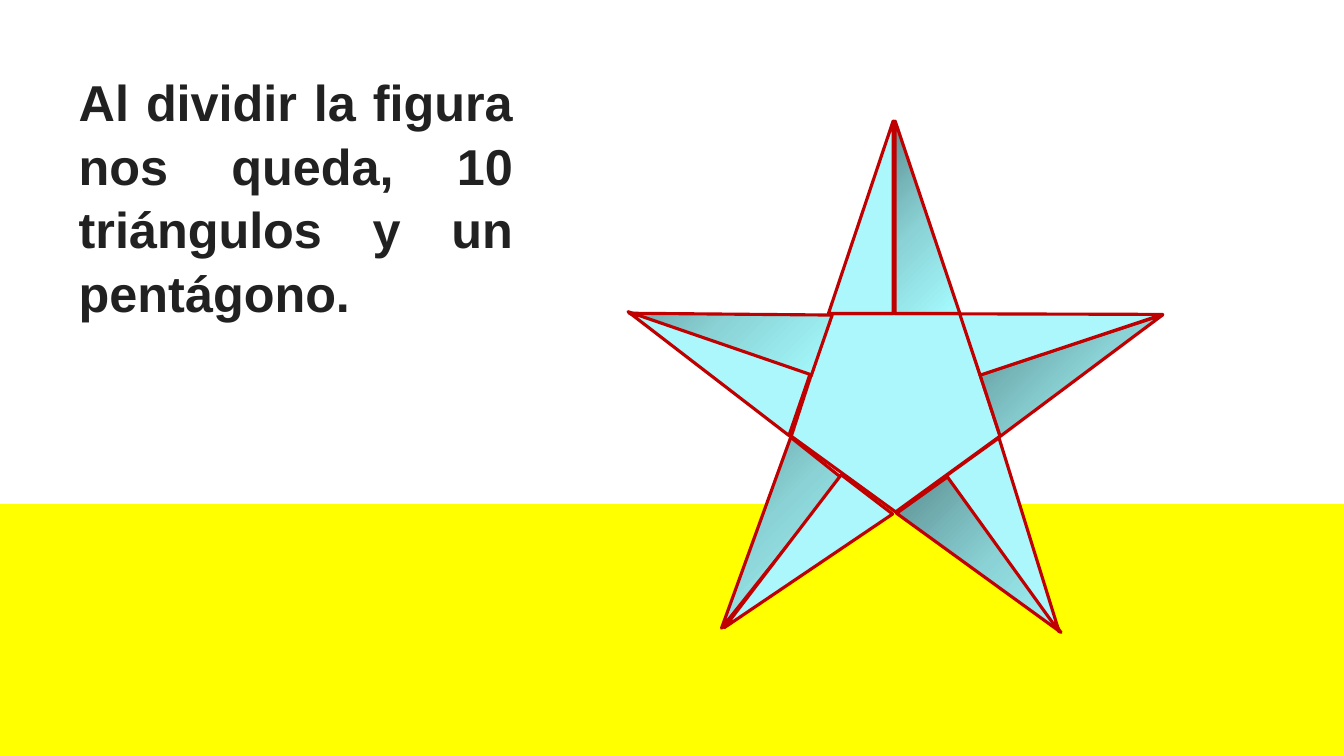
from pptx import Presentation
from pptx.dml.color import RGBColor
from pptx.enum import shapes, text
from pptx.oxml import parse_xml
from pptx.oxml.ns import nsdecls
from pptx.util import Cm, Pt

WHITE = RGBColor(0xFF, 0xFF, 0xFF)
YELLOW = RGBColor(0xFF, 0xFF, 0x00)
AQUA = RGBColor(0xAB, 0xF7, 0xFB)
RED = RGBColor(0xC0, 0x00, 0x00)
INK = RGBColor(0x21, 0x21, 0x21)
SHADE = (
    (0, RGBColor(0x5E, 0x91, 0x94)),
    (50, RGBColor(0x8A, 0xD2, 0xD5)),
    (100, RGBColor(0xA5, 0xFC, 0xFF)),
)
WIDE, TALL = 1.63, 4.85

# Each arm of the star: (left, top, angle) of its shaded half, then of its plain half
ARMS = (
    ((22.56, 3.05, 0), (20.88, 3.05, 0)),
    ((26.44, 7.04, 71.8), (25.93, 5.49, 71.6)),
    ((17.6, 5.49, 289.1), (17.04, 6.99, 289)),
    ((18.24, 11, 218.5), (19.56, 11.96, 217.4)),
    ((23.85, 12.01, 144.5), (25.12, 11.05, 144.2)),
)


def add_form(slide, kind, box, fill, angle=0, edge=RED):
    form = slide.shapes.add_shape(kind, *map(Cm, box))
    form.shadow.inherit = False
    form.rotation = angle
    form.fill.solid()
    form.fill.fore_color.rgb = fill
    if edge is None:
        form.line.fill.background()
    else:
        form.line.color.rgb = edge
        form.line.width = Pt(2.25)
    return form


def add_half(slide, left, top, angle):
    box = (left, top, WIDE, TALL)
    return add_form(slide, shapes.MSO_SHAPE.RIGHT_TRIANGLE, box, AQUA, angle)


def shade(form):
    """Fill with a radial gradient, darkest at the top left of the slide side."""
    stops = "".join(
        f'<a:gs pos="{pos * 1000}"><a:srgbClr val="{tint}"/></a:gs>'
        for pos, tint in SHADE
    )
    grad = parse_xml(
        f'<a:gradFill {nsdecls("a")} rotWithShape="0"><a:gsLst>{stops}</a:gsLst>'
        '<a:path path="circle"><a:fillToRect r="100000" b="100000"/></a:path>'
        "</a:gradFill>"
    )
    props = form._element.spPr
    props.replace(props.solidFill, grad)


def mirror(form):
    form._element.spPr.xfrm.set("flipH", "1")


def set_title(slide, words):
    title = slide.shapes.title
    title.left, title.top, title.width, title.height = map(
        Cm, (1.73, 1.6, 11.46, 7.75)
    )
    frame = title.text_frame
    frame.text = words
    frame.word_wrap = True
    frame.auto_size = text.MSO_AUTO_SIZE.NONE
    frame.vertical_anchor = text.MSO_ANCHOR.TOP
    para = frame.paragraphs[0]
    para.alignment = text.PP_ALIGN.JUSTIFY
    para.line_spacing = 1.05
    para.font.name = "Arial"
    para.font.size = Pt(36)
    para.font.bold = True
    para.font.color.rgb = INK


def main():
    deck = Presentation()
    deck.slide_width, deck.slide_height = Cm(33.87), Cm(19.05)
    slide = deck.slides.add_slide(deck.slide_layouts[5])
    slide.background.fill.solid()
    slide.background.fill.fore_color.rgb = YELLOW

    kinds = shapes.MSO_SHAPE
    band = add_form(slide, kinds.RECTANGLE, (0, 0, 33.87, 12.7), WHITE, edge=None)
    add_form(slide, kinds.REGULAR_PENTAGON, (19.94, 7.9, 5.26, 5), AQUA, 180)
    for dark, plain in ARMS:
        shade(add_half(slide, *dark))
        mirror(add_half(slide, *plain))

    set_title(slide, "Al dividir la figura nos queda, 10 triángulos y un pentágono.")
    band._element.addnext(slide.shapes.title._element)
    deck.save("out.pptx")


if __name__ == "__main__":
    main()
